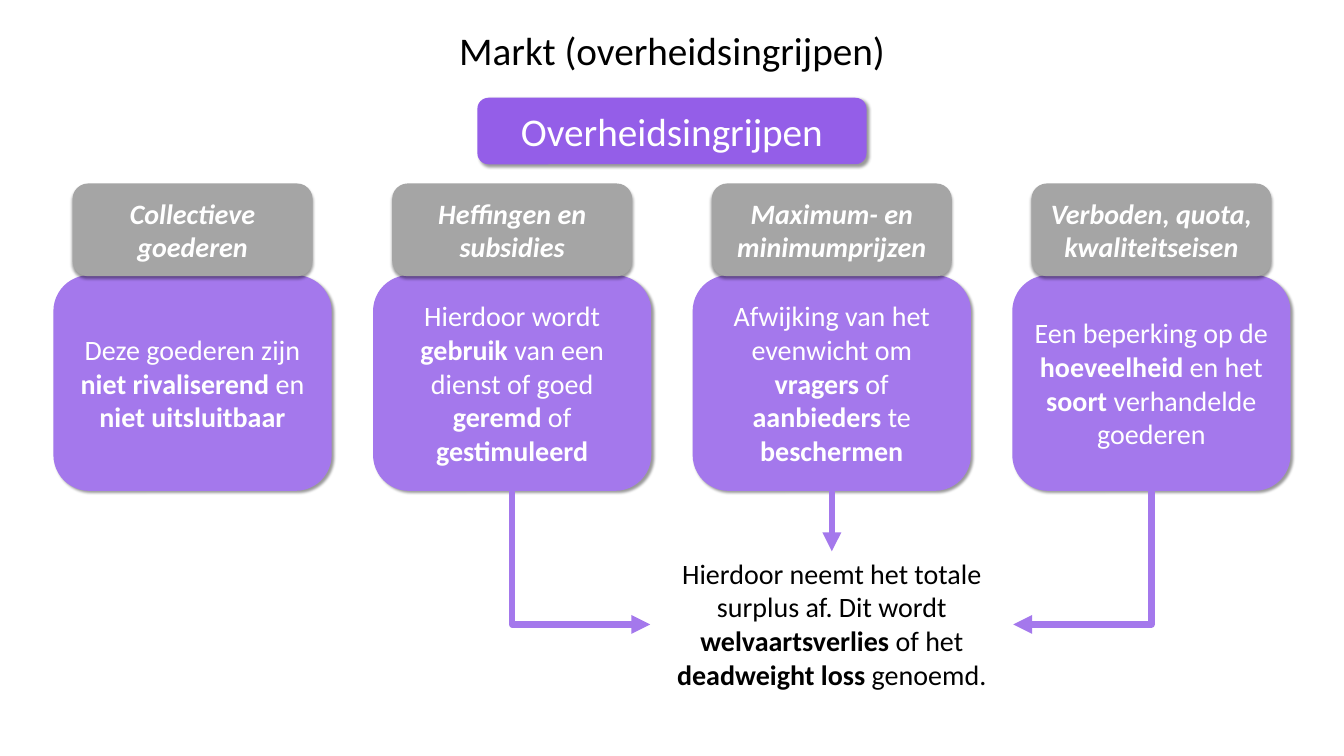
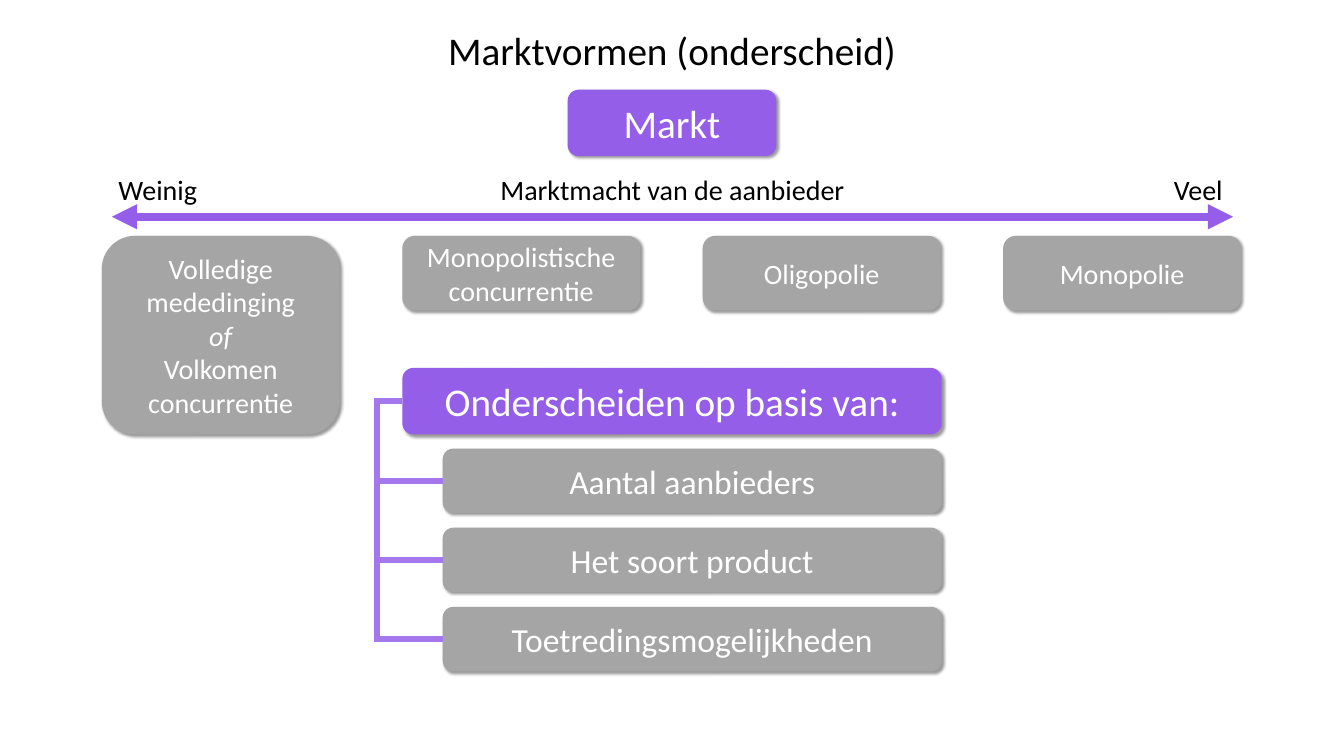
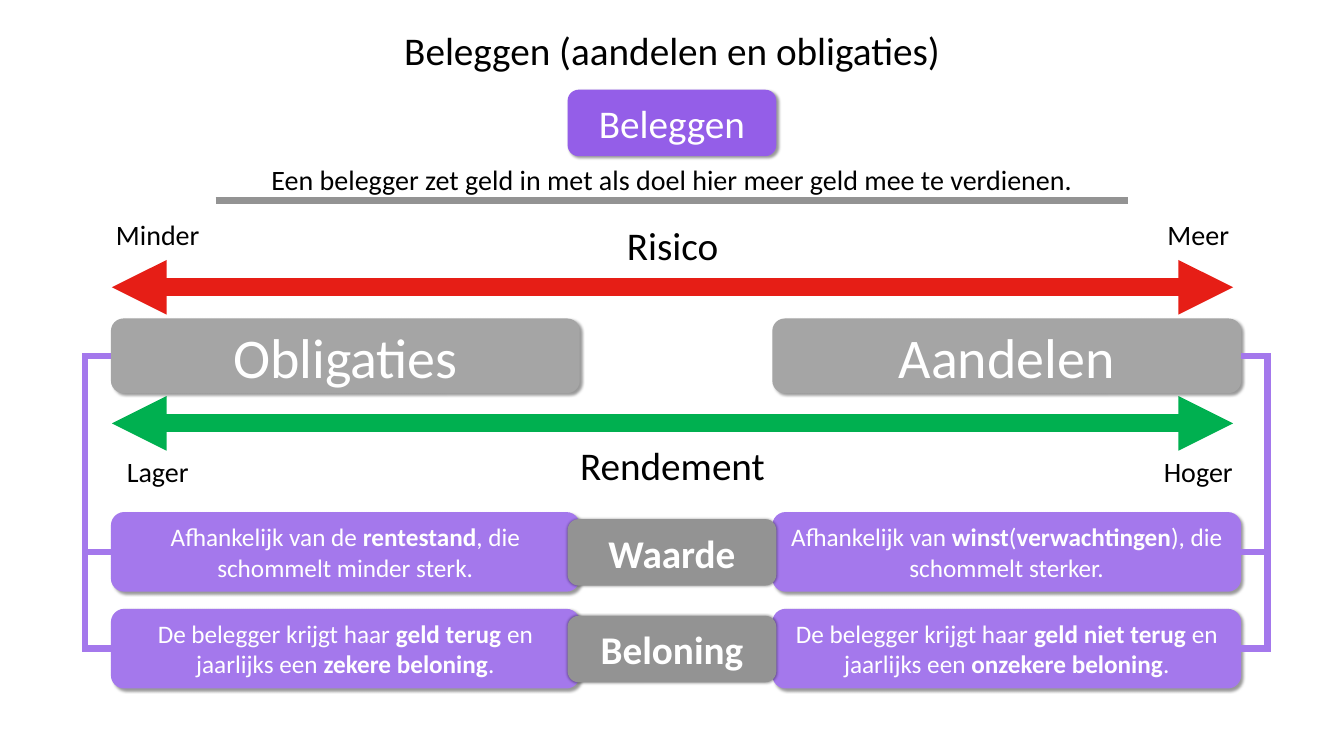
from lxml.etree import SubElement
from pptx import Presentation
from pptx.dml.color import RGBColor
from pptx.enum.shapes import MSO_CONNECTOR, MSO_SHAPE
from pptx.enum.text import MSO_ANCHOR, PP_ALIGN
from pptx.oxml.ns import qn
from pptx.util import Inches, Pt

# Shared look
FONT = "Calibri"
DEEP, LILAC = "945EE8", "A478EC"
GREY, DARK = "A5A5A5", "939393"
WHITE, BLACK = "FFFFFF", "000000"
RED, GREEN = "E61E16", "00B050"
WIDE, TALL = 13.33, 7.5
THICK = 4.5
TOP, LEFT, BOTTOM, RIGHT = range(4)  # connection sites


def paint(code):
    return RGBColor.from_string(code)


def write(shape, text, size, color, bold=None):
    """Fill a shape with centred lines; bars enclose bold words."""
    frame = shape.text_frame
    frame.word_wrap = True
    for n, line in enumerate(text.split("\n")):
        para = frame.paragraphs[0] if n == 0 else frame.add_paragraph()
        para.alignment = PP_ALIGN.CENTER
        for k, part in enumerate(line.split("|")):
            if part:
                run = para.add_run()
                run.text = part
                if k % 2:
                    run.font.bold = True
        font = para.font
        font.name, font.size, font.bold = FONT, Pt(size), bold
        font.color.rgb = paint(color)


def label(slide, x, y, w, h, text, size=20):
    box = slide.shapes.add_textbox(Inches(x), Inches(y), Inches(w), Inches(h))
    write(box, text, size, BLACK)
    return box


def shade(shape, angle, dist):
    """Give a shape a soft outer shadow."""
    shape.shadow.inherit = False
    effects = shape._element.spPr.find(qn("a:effectLst"))
    outer = SubElement(effects, qn("a:outerShdw"), blurRad=str(Pt(2)),
                       dist=str(Pt(dist)), dir=str(angle * 60000),
                       algn="ctr", rotWithShape="0")
    tint = SubElement(outer, qn("a:srgbClr"), val=BLACK)
    SubElement(tint, qn("a:alpha"), val="40000")


def card(slide, x, y, w, h, text, fill, size=20, bold=None, angle=45, dist=2):
    box = slide.shapes.add_shape(MSO_SHAPE.ROUNDED_RECTANGLE, Inches(x),
                                 Inches(y), Inches(w), Inches(h))
    box.fill.solid()
    box.fill.fore_color.rgb = paint(fill)
    box.line.fill.background()
    shade(box, angle, dist)
    box.text_frame.vertical_anchor = MSO_ANCHOR.MIDDLE
    write(box, text, size, WHITE, bold)
    return box


def link(slide, x1, y1, x2, y2, color=LILAC, width=THICK, ends=(),
         kind=MSO_CONNECTOR.STRAIGHT):
    """Draw a connector; ends lists headEnd and/or tailEnd arrows."""
    line = slide.shapes.add_connector(kind, Inches(x1), Inches(y1),
                                      Inches(x2), Inches(y2))
    line.line.color.rgb = paint(color)
    line.line.width = Pt(width)
    for end in ends:
        SubElement(line.line._ln, qn("a:" + end), type="triangle")
    SubElement(line._element.spPr, qn("a:effectLst"))
    return line


def span(slide, y, color, width):
    """Draw the wide arrow with two heads."""
    link(slide, 1.11, y, 12.23, y, color, width, ("headEnd", "tailEnd"))


def poles(slide, y, low, high):
    """Name the two ends of a wide arrow."""
    for x, text in ((0.93, low), (11.25, high)):
        label(slide, x, y, 1.27, 0.44, text)


def brace(slide, x, boxes, side):
    """Tie boxes together with one trunk and a branch to each."""
    mids = [(box.top + box.height / 2) / Inches(1) for box in boxes]
    trunk = link(slide, x, mids[0], x, mids[-1])
    trunk.line._ln.set("cap", "sq")
    for box, y in zip(boxes, mids):
        edge = box.left + (box.width if side == RIGHT else 0)
        link(slide, x, y, edge / Inches(1), y).end_connect(box, side)


def start(deck, title, badge, y=0.89, w=2.07):
    """Add a slide with its title and purple badge."""
    slide = deck.slides.add_slide(deck.slide_layouts[6])
    label(slide, 2.34, 0.21, 8.65, 0.57, title, 28)
    card(slide, (WIDE - w) / 2, y, w, 0.66, badge, DEEP, 28)
    return slide


def policy(deck):
    slide = start(deck, "Markt (overheidsingrijpen)", "Overheidsingrijpen",
                  0.97, 3.86)
    topics = (
        ("Collectieve goederen",
         "Deze goederen zijn\n|niet rivaliserend| en\n|niet uitsluitbaar|"),
        ("Heffingen en subsidies",
         "Hierdoor wordt |gebruik| van een dienst of goed |geremd| of "
         "|gestimuleerd|"),
        ("Maximum- en minimumprijzen",
         "Afwijking van het evenwicht om |vragers| of |aanbieders| te "
         "|beschermen|"),
        ("Verboden, quota, kwaliteitseisen",
         "Een beperking op de |hoeveelheid| en het |soort| verhandelde "
         "goederen"),
    )
    mids = [1.91 + 3.17 * n for n in range(len(topics))]
    # Columns
    boxes = []
    for mid, (head, body) in zip(mids, topics):
        boxes.append(card(slide, mid - 1.38, 2.73, 2.76, 2.14, body, LILAC))
        tab = card(slide, mid - 1.19, 1.82, 2.38, 0.92, head, GREY,
                   bold=True, angle=90)
        tab.text_frame.paragraphs[0].font.italic = True
    # Shared outcome
    loss = label(slide, mids[2] - 1.8, 5.47, 3.6, 1.45,
                 "Hierdoor neemt het totale surplus af. Dit wordt "
                 "|welvaartsverlies| of het |deadweight loss| genoemd.")
    down = link(slide, mids[2], 4.87, mids[2], 5.47, ends=["tailEnd"])
    down.begin_connect(boxes[2], BOTTOM)
    down.end_connect(loss, TOP)
    for n, side, x in ((1, LEFT, mids[2] - 1.8), (3, RIGHT, mids[2] + 1.8)):
        bend = link(slide, x, 6.19, mids[n], 4.87, ends=["headEnd"],
                    kind=MSO_CONNECTOR.ELBOW)
        bend._element.spPr.find(qn("a:prstGeom")).set("prst", "bentConnector2")
        bend.begin_connect(loss, side)
        bend.end_connect(boxes[n], BOTTOM)


def forms(deck):
    slide = start(deck, "Marktvormen (onderscheid)", "Markt")
    # Scale of market power
    span(slide, 2.15, DEEP, 6)
    label(slide, 4.39, 1.66, 4.56, 0.44, "Marktmacht van de aanbieder")
    poles(slide, 1.66, "Weinig", "Veel")
    kinds = (
        ("Volledige mededinging\nof\nVolkomen concurrentie", 1.97),
        ("Monopolistische concurrentie", 0.74),
        ("Oligopolie", 0.74),
        ("Monopolie", 0.74),
    )
    boxes = [card(slide, 1.01 + 2.98 * n, 2.34, 2.36, h, text, GREY)
             for n, (text, h) in enumerate(kinds)]
    boxes[0].text_frame.paragraphs[1].font.italic = True
    # Criteria
    tree = [card(slide, 3.99, 3.65, 5.35, 0.66,
                 "Onderscheiden op basis van:", DEEP, 28)]
    for n, text in enumerate(("Aantal aanbieders", "Het soort product",
                              "Toetredingsmogelijkheden")):
        tree.append(card(slide, 4.39, 4.45 + 0.785 * n, 4.95, 0.64, text,
                         GREY, 24))
    brace(slide, 3.74, tree, LEFT)


def invest(deck):
    slide = start(deck, "Beleggen (aandelen en obligaties)", "Beleggen")
    label(slide, 2.34, 1.56, 8.65, 0.44,
          "Een belegger zet geld in met als doel hier meer geld mee te "
          "verdienen.")
    link(slide, 2.14, 1.99, 11.19, 1.99, DARK)
    # Risk and return scales
    span(slide, 2.85, RED, 13)
    span(slide, 4.2, GREEN, 13)
    for y, text in ((2.15, "Risico"), (4.33, "Rendement")):
        label(slide, 4.39, y, 4.56, 0.57, text, 28)
    poles(slide, 2.11, "Minder", "Meer")
    poles(slide, 4.46, "Lager", "Hoger")
    # Both products with their traits
    sides = (
        (1.1, 0.84, LEFT, "Obligaties",
         "Afhankelijk van de |rentestand|, die schommelt minder sterk.",
         "De belegger krijgt haar |geld terug| en jaarlijks een "
         "|zekere beloning|."),
        (7.66, 12.57, RIGHT, "Aandelen",
         "Afhankelijk van |winst|(|verwachtingen|), die schommelt sterker.",
         "De belegger krijgt haar |geld niet terug| en jaarlijks een "
         "|onzekere beloning|."),
    )
    rows = (5.08, 6.04)
    for x, trunk, side, name, *traits in sides:
        boxes = [card(slide, x, 3.16, 4.65, 0.74, name, GREY, 40)]
        for y, text in zip(rows, traits):
            boxes.append(card(slide, x, y, 4.65, 0.79, text, LILAC, 18))
        brace(slide, trunk, boxes, side)
    for y, text in zip(rows, ("Waarde", "Beloning")):
        card(slide, 5.63, y + 0.07, 2.07, 0.66, text, DARK, 28, True, 0, 0)


def main():
    deck = Presentation()
    deck.slide_width, deck.slide_height = Inches(WIDE), Inches(TALL)
    policy(deck)
    forms(deck)
    invest(deck)
    deck.save("out.pptx")


if __name__ == "__main__":
    main()
